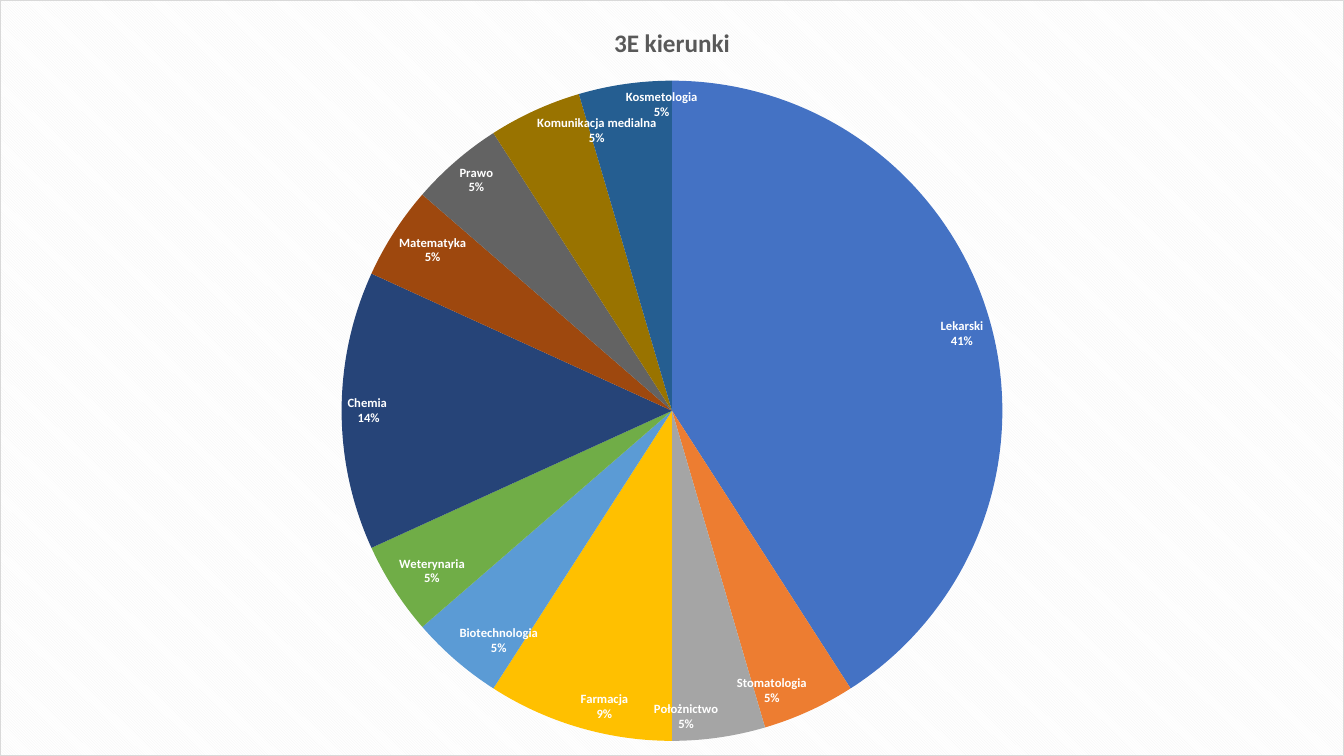
from lxml import etree
from pptx import Presentation
from pptx.chart.data import CategoryChartData
from pptx.dml.color import RGBColor
from pptx.enum.chart import XL_CHART_TYPE, XL_LABEL_POSITION
from pptx.oxml import parse_xml
from pptx.oxml.ns import nsdecls, qn
from pptx.util import Inches, Pt

PIE = XL_CHART_TYPE.PIE
INSIDE_END = XL_LABEL_POSITION.INSIDE_END

BLACK = RGBColor(0x00, 0x00, 0x00)
WHITE = RGBColor(0xFF, 0xFF, 0xFF)
TITLE_GREY = RGBColor(0x59, 0x59, 0x59)
STRIPE_GREY = RGBColor(0xF2, 0xF2, 0xF2)
BORDER_GREY = RGBColor(0xD9, 0xD9, 0xD9)

# Course, number of students, slice colour
COURSES = [
    ("Lekarski", 9, RGBColor(0x44, 0x72, 0xC4)),
    ("Stomatologia", 1, RGBColor(0xED, 0x7D, 0x31)),
    ("Położnictwo", 1, RGBColor(0xA5, 0xA5, 0xA5)),
    ("Farmacja", 2, RGBColor(0xFF, 0xC0, 0x00)),
    ("Biotechnologia", 1, RGBColor(0x5B, 0x9B, 0xD5)),
    ("Weterynaria", 1, RGBColor(0x70, 0xAD, 0x47)),
    ("Chemia ", 3, RGBColor(0x26, 0x44, 0x78)),
    ("Matematyka", 1, RGBColor(0x9E, 0x48, 0x0E)),
    ("Prawo", 1, RGBColor(0x63, 0x63, 0x63)),
    ("Komunikacja medialna", 1, RGBColor(0x99, 0x73, 0x00)),
    ("Kosmetologia", 1, RGBColor(0x25, 0x5E, 0x91)),
]


def format_font(font, size, color, bold=False):
    font.name = "Calibri"
    font.size = Pt(size)
    font.bold = bold
    font.color.rgb = color


prs = Presentation()
prs.slide_width = Inches(13.33)
prs.slide_height = Inches(7.5)
s = prs.slides.add_slide(prs.slide_layouts[6])

# Full-slide pie chart
data = CategoryChartData()
data.categories = [name for name, count, color in COURSES]
data.add_series("Series 1", [count for name, count, color in COURSES])
chart = s.shapes.add_chart(PIE, 0, 0, prs.slide_width, prs.slide_height, data).chart
chart.has_legend = False
format_font(chart.font, 10, BLACK)

# Title
chart.has_title = True
tf = chart.chart_title.text_frame
r = tf.paragraphs[0].add_run()
r.text = "3E kierunki"
format_font(r.font, 18, TITLE_GREY, bold=True)
chart.chart_title.include_in_layout = False

# Slices
series = chart.plots[0].series[0]
for i, (name, count, color) in enumerate(COURSES):
    fill = series.points[i].format.fill
    fill.solid()
    fill.fore_color.rgb = color

# Labels: name above percentage
labels = series.data_labels
labels.show_value = False
labels.show_category_name = True
labels.show_percentage = True
labels.position = INSIDE_END
format_font(labels.font, 9, WHITE, bold=True)
separator = etree.Element(qn("c:separator"))
separator.text = "\n"
labels._element.find(qn("c:showBubbleSize")).addnext(separator)

# Position of the pie as shares of the chart
plot_area = chart._chartSpace.chart.plotArea
for layout in plot_area.findall(qn("c:layout")):
    plot_area.remove(layout)
plot_area.insert(0, parse_xml(
    f'<c:layout {nsdecls("c")}><c:manualLayout><c:layoutTarget val="inner"/>'
    '<c:xMode val="edge"/><c:yMode val="edge"/><c:x val="0.254"/><c:y val="0.106"/>'
    '<c:w val="0.492"/><c:h val="0.875"/></c:manualLayout></c:layout>'))

# Striped background with a thin border
chart._chartSpace.chart.addnext(parse_xml(
    f'<c:spPr {nsdecls("c", "a")}><a:pattFill prst="dkDnDiag">'
    f'<a:fgClr><a:srgbClr val="{STRIPE_GREY}"/></a:fgClr>'
    f'<a:bgClr><a:srgbClr val="{WHITE}"/></a:bgClr></a:pattFill>'
    f'<a:ln w="{Pt(0.75)}"><a:solidFill><a:srgbClr val="{BORDER_GREY}"/></a:solidFill></a:ln>'
    '</c:spPr>'))

prs.save("out.pptx")
